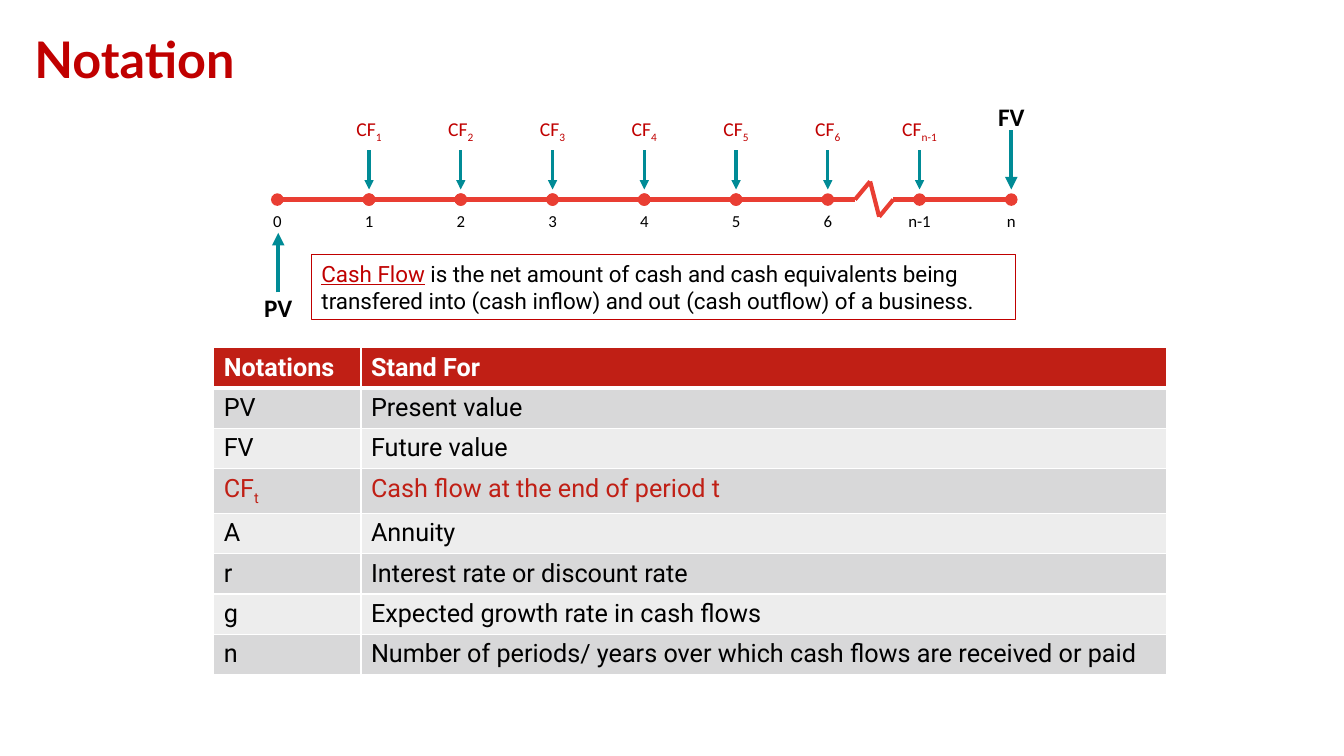
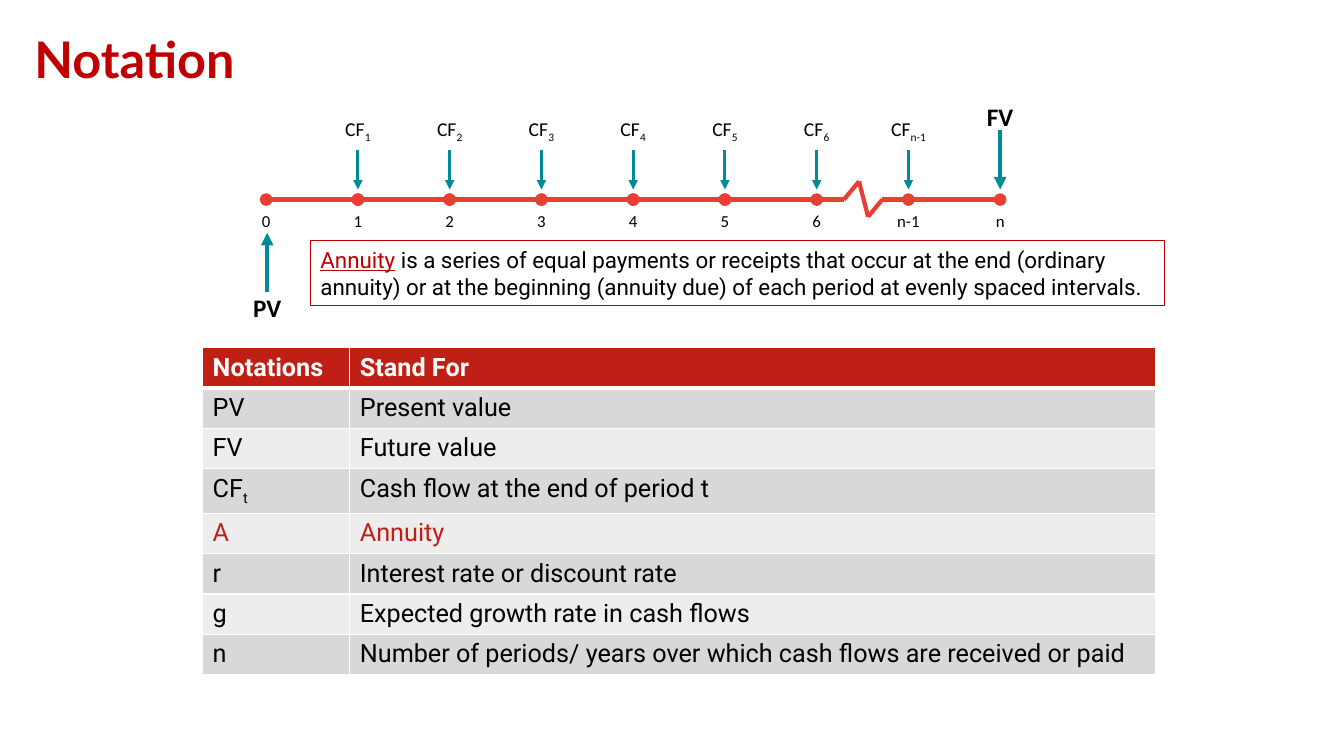
from itertools import pairwise

from lxml.etree import SubElement
from pptx import Presentation
from pptx.dml.color import RGBColor
from pptx.enum.shapes import MSO_CONNECTOR, MSO_SHAPE
from pptx.enum.text import MSO_ANCHOR, MSO_AUTO_SIZE, PP_ALIGN
from pptx.oxml.ns import qn
from pptx.util import Inches, Pt

DARK_RED = RGBColor(0xC0, 0x00, 0x00)
TABLE_RED = RGBColor(0xC0, 0x1F, 0x15)
LINE_RED = RGBColor(0xE9, 0x3E, 0x33)
TEAL = RGBColor(0x00, 0x8B, 0x96)
BLACK = RGBColor(0x00, 0x00, 0x00)
WHITE = RGBColor(0xFF, 0xFF, 0xFF)
BANDS = (RGBColor(0xED, 0xED, 0xED), RGBColor(0xD8, 0xD8, 0xD9))

TITLE_FONT, BODY_FONT, LABEL_FONT = "Lato", "Roboto", "Calibri"

AXIS_Y, STEP = 1.98, 0.91
PERIODS = ("0", "1", "2", "3", "4", "5", "6", "n-1", "n")
# Offsets of the axis break from period 6, and heights relative to the axis
BREAK = ((0, 0), (0.27, 0), (0.42, -0.18), (0.51, 0.17), (0.65, 0), (STEP, 0))

NOTATIONS = (
    ("Notations", "Stand For"),
    ("PV", "Present value"),
    ("FV", "Future value"),
    ("CF_t", "Cash flow at the end of period t"),
    ("A", "Annuity"),
    ("r", "Interest rate or discount rate"),
    ("g", "Expected growth rate in cash flows"),
    ("n", "Number of periods/ years over which cash flows are received or paid"),
)


class Deck:
    """Holds the presentation, the current slide and the shared style."""

    def __init__(self):
        self.prs = Presentation()
        self.prs.slide_width = Inches(13.33)
        self.prs.slide_height = Inches(7.5)
        self.slide = None

    def add_slide(self, title):
        self.slide = self.prs.slides.add_slide(self.prs.slide_layouts[5])
        sp = self.slide.shapes.title
        sp.left, sp.top = Inches(0.24), Inches(-0.02)
        sp.width, sp.height = Inches(11.5), Inches(1.28)
        tf = sp.text_frame
        tf.vertical_anchor = MSO_ANCHOR.MIDDLE
        p = tf.paragraphs[0]
        p.alignment = PP_ALIGN.LEFT
        p.line_spacing = 0.9
        self.run(p, title, TITLE_FONT, 36, DARK_RED, bold=True)

    def run(self, p, text, font, size, color, bold=False, underline=False):
        r = p.add_run()
        r.text = text
        r.font.name, r.font.size = font, Pt(size)
        r.font.bold, r.font.underline = bold, underline
        r.font.color.rgb = color
        return r

    def runs(self, p, text, *style):
        """Add text in which whatever follows an underscore is a subscript."""
        base, _, sub = text.partition("_")
        self.run(p, base, *style)
        if sub:
            r = self.run(p, sub, *style)
            r.font._element.set("baseline", "-25000")

    def line(self, shapes, start, end, color, width, head=None, tail=None):
        x1, y1, x2, y2 = map(Inches, (*start, *end))
        c = shapes.add_connector(MSO_CONNECTOR.STRAIGHT, x1, y1, x2, y2)
        c.line.color.rgb = color
        c.line.width = Pt(width)
        ln = c.line._get_or_add_ln()
        for tag, kind in (("a:headEnd", head), ("a:tailEnd", tail)):
            if kind:
                SubElement(ln, qn(tag), type=kind)
        SubElement(c._element.spPr, qn("a:effectLst"))

    def arrow(self, shapes, x, y1, y2, width):
        self.line(shapes, (x, y1), (x, y2), TEAL, width, tail="triangle")

    def label(self, shapes, text, x, top, width, height, size, color=BLACK, bold=False):
        """Add a label centred on x."""
        sp = shapes.add_textbox(Inches(x - width / 2), Inches(top),
                                Inches(width), Inches(height))
        tf = sp.text_frame
        tf.word_wrap = False
        tf.auto_size = MSO_AUTO_SIZE.SHAPE_TO_FIT_TEXT
        p = tf.paragraphs[0]
        p.alignment = PP_ALIGN.CENTER
        self.runs(p, text, LABEL_FONT, size, color, bold)

    def timeline(self, left, flow_color):
        shapes = self.slide.shapes.add_group_shape().shapes
        xs = [left + i * STEP for i in range(len(PERIODS))]
        break_x = xs[PERIODS.index("6")]

        for x1, x2 in pairwise(xs):
            if x1 != break_x:
                self.line(shapes, (x1, AXIS_Y), (x2, AXIS_Y), LINE_RED, 3, "oval", "oval")
        points = [(break_x + dx, AXIS_Y + dy) for dx, dy in BREAK]
        for start, end in pairwise(points):
            self.line(shapes, start, end, LINE_RED, 3)

        for x, period in zip(xs, PERIODS):
            wide = len(period) > 1
            self.label(shapes, period, x, 2.04, 0.44 if wide else 0.29, 0.3, 12)
            if period not in ("0", "n"):
                self.arrow(shapes, x, 1.49, 1.88, 2.25)
                self.label(shapes, f"CF_{period}", x, 1.11, 0.65 if wide else 0.54,
                           0.34, 14, flow_color)

        self.arrow(shapes, xs[-1], 1.29, 1.88, 3)
        self.label(shapes, "FV", xs[-1], 0.96, 0.54, 0.4, 18, bold=True)
        self.arrow(shapes, xs[0] + 0.01, 2.9, 2.31, 3)
        self.label(shapes, "PV", xs[0] + 0.01, 2.85, 0.54, 0.4, 18, bold=True)

    def borders(self, cell, top, bottom):
        tc_pr = cell._tc.get_or_add_tcPr()
        for side, width in (("L", 1), ("R", 1), ("T", top), ("B", bottom)):
            ln = SubElement(tc_pr, qn(f"a:ln{side}"), w=str(Pt(width)))
            fill = SubElement(ln, qn("a:solidFill"))
            SubElement(fill, qn("a:srgbClr"), val=str(WHITE))

    def table(self, left, rows, highlight):
        """Add the notation table; the row whose key is highlight is red."""
        row_height = Inches(0.39)
        widths = (Inches(1.46), Inches(7.99))
        table = self.slide.shapes.add_table(
            len(rows), len(widths), Inches(left), Inches(3.45),
            sum(widths), row_height * len(rows)).table
        for col, width in zip(table.columns, widths):
            col.width = width
        for i, texts in enumerate(rows):
            table.rows[i].height = row_height
            header = i == 0
            if header:
                color = WHITE
            else:
                color = TABLE_RED if texts[0] == highlight else BLACK
            for j, text in enumerate(texts):
                cell = table.cell(i, j)
                self.borders(cell, 3 if i == 1 else 1, 3 if header else 1)
                cell.fill.solid()
                cell.fill.fore_color.rgb = TABLE_RED if header else BANDS[i % 2]
                self.runs(cell.text_frame.paragraphs[0], text, BODY_FONT, 18, color, header)

    def definition(self, term, meaning, left, top, width):
        sp = self.slide.shapes.add_shape(MSO_SHAPE.RECTANGLE, Inches(left), Inches(top),
                                         Inches(width), Inches(0.64))
        sp.shadow.inherit = False
        sp.fill.background()
        sp.line.color.rgb = DARK_RED
        sp.line.width = Pt(0.75)
        tf = sp.text_frame
        tf.word_wrap = True
        tf.auto_size = MSO_AUTO_SIZE.SHAPE_TO_FIT_TEXT
        tf.vertical_anchor = MSO_ANCHOR.TOP
        p = tf.paragraphs[0]
        p.alignment = PP_ALIGN.LEFT
        self.run(p, term, BODY_FONT, 16, DARK_RED, underline=True)
        self.run(p, f" {meaning}", BODY_FONT, 16, BLACK)


def main():
    deck = Deck()

    deck.add_slide("Notation")
    deck.timeline(2.75, DARK_RED)
    deck.table(2.12, NOTATIONS, "CF_t")
    deck.definition(
        "Cash Flow",
        "is the net amount of cash and cash equivalents being transfered into "
        "(cash inflow) and out (cash outflow) of a business.",
        3.09, 2.53, 6.98)

    deck.add_slide("Notation")
    deck.timeline(2.64, BLACK)
    deck.table(2.01, NOTATIONS, "A")
    deck.definition(
        "Annuity",
        "is a series of equal payments or receipts that occur at the end "
        "(ordinary annuity) or at the beginning (annuity due) of each period "
        "at evenly spaced intervals.",
        3.08, 2.39, 8.47)

    deck.prs.save("out.pptx")


if __name__ == "__main__":
    main()
